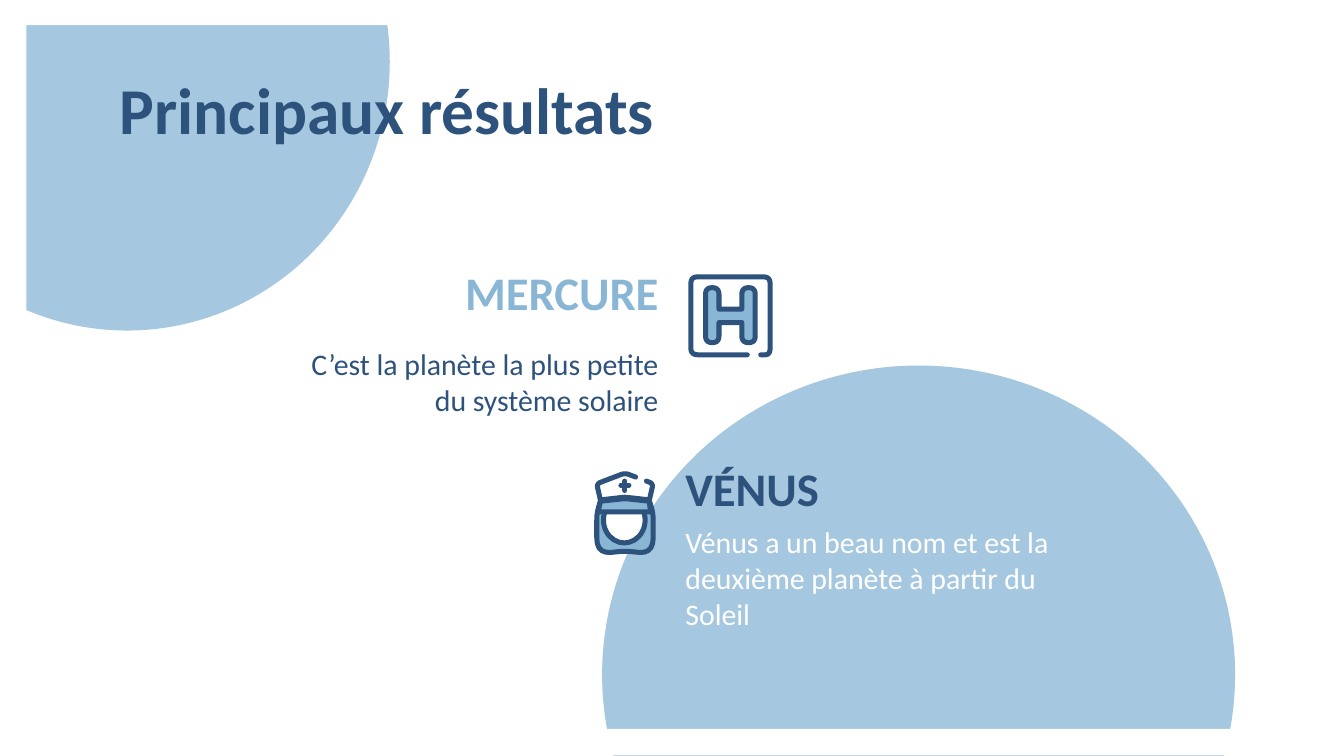
from lxml import etree
from pptx import Presentation
from pptx.dml.color import RGBColor
from pptx.enum import shapes, text
from pptx.oxml.ns import qn
from pptx.util import Inches, Pt

COLORS = {"navy": "2D527C", "sky": "8AB6D6", "white": "FFFFFF"}

prs = Presentation()
prs.slide_width = Inches(10)
prs.slide_height = Inches(10) * 9 // 16
s = prs.slides.add_slide(prs.slide_layouts.get_by_name("Comparison"))


def paint(sp, fill=None, line=None):
    """Set fill and outline; outlines get round caps and joins."""
    sp.shadow.inherit = False
    if fill:
        sp.fill.solid()
        sp.fill.fore_color.rgb = RGBColor.from_string(COLORS[fill])
    else:
        sp.fill.background()
    if line:
        sp.line.color.rgb = RGBColor.from_string(COLORS[line])
        sp.line.width = Pt(2.7)
        ln = sp.line._get_or_add_ln()
        ln.set("cap", "rnd")
        etree.SubElement(ln, qn("a:round"))
    else:
        sp.line.fill.background()


def draw(corners, fill=None, close=True):
    """Draw a navy outline through (x, y, corner radius) points."""
    pts = []
    for i, (x, y, radius) in enumerate(corners):
        if not radius:
            pts.append((x, y))
            continue
        ends = []
        for nx, ny, _ in (corners[i - 1], corners[(i + 1) % len(corners)]):
            dist = ((nx - x) ** 2 + (ny - y) ** 2) ** 0.5
            k = min(radius / dist, 0.5)
            ends.append((x + (nx - x) * k, y + (ny - y) * k))
        (ax, ay), (bx, by) = ends
        for t in (0, 0.2, 0.4, 0.6, 0.8, 1):
            u = 1 - t
            pts.append((u * u * ax + 2 * u * t * x + t * t * bx,
                        u * u * ay + 2 * u * t * y + t * t * by))
    pts = [(Inches(x), Inches(y)) for x, y in pts]
    builder = s.shapes.build_freeform(*pts[0])
    builder.add_line_segments(pts[1:], close=close)
    paint(builder.convert_to_shape(), fill, "navy")


# Background circles and white frame, behind the text
OVAL, FRAME = shapes.MSO_SHAPE.OVAL, shapes.MSO_SHAPE.FRAME
backdrop = [
    (OVAL, "sky", (-1.01, -1.54, 3.91, 4)),
    (OVAL, "sky", (4.48, 2.72, 4.71, 4.6)),
    (FRAME, "white", (0, -0.01, 10, 5.63)),
]
for i, (kind, color, box) in enumerate(backdrop):
    sp = s.shapes.add_shape(kind, *[Inches(v) for v in box])
    paint(sp, color)
    if kind == FRAME:
        sp.adjustments[0] = 0.035
    else:
        clr = sp._element.spPr.find(qn("a:solidFill"))[0]
        etree.SubElement(clr, qn("a:alpha"), val="76000")
    s.shapes._spTree.insert(2 + i, sp._element)

# Title, headings and descriptions
LEFT, RIGHT = text.PP_ALIGN.LEFT, text.PP_ALIGN.RIGHT
texts = [
    (0, "Principaux résultats", (0.79, 0.49, 8.43, 0.63), 35, True, "navy", LEFT),
    (1, "MERCURE", (2.44, 1.88, 2.56, 0.58), 25, True, "sky", RIGHT),
    (2, "C’est la planète la plus petite du système solaire",
     (2.05, 2.34, 2.95, 1), 16, False, "navy", RIGHT),
    (3, "VÉNUS", (5, 3.34, 2.56, 0.58), 25, True, "navy", LEFT),
    (4, "Vénus a un beau nom et est la deuxième planète à partir du Soleil",
     (5, 3.8, 2.95, 1), 16, False, "white", LEFT),
]
holders = {ph.placeholder_format.idx: ph for ph in s.placeholders}
for idx, words, box, size, bold, color, align in texts:
    sp = holders[idx]
    sp.left, sp.top, sp.width, sp.height = [Inches(v) for v in box]
    tf = sp.text_frame
    tf.word_wrap = True
    tf.auto_size = text.MSO_AUTO_SIZE.NONE
    tf.vertical_anchor = text.MSO_ANCHOR.MIDDLE
    tf.margin_left = tf.margin_right = tf.margin_top = tf.margin_bottom = Inches(0.1)
    p = tf.paragraphs[0]
    p.alignment = align
    p.space_before = Pt(0)
    p.line_spacing = 1.0
    pPr = p._p.get_or_add_pPr()
    pPr.set("marL", "0")
    pPr.set("indent", "0")
    etree.SubElement(pPr, qn("a:buNone"))
    r = p.add_run()
    r.text = words
    r.font.name = "Calibri"
    r.font.size = Pt(size)
    r.font.bold = bold
    r.font.color.rgb = RGBColor.from_string(COLORS[color])

# Hospital sign: letter H in an open frame
draw([(5.25, 2.14, 0.05), (5.35, 2.14, 0.05), (5.35, 2.3, 0), (5.52, 2.3, 0),
      (5.52, 2.14, 0.05), (5.62, 2.14, 0.05), (5.62, 2.55, 0.05),
      (5.52, 2.55, 0.05), (5.52, 2.4, 0), (5.35, 2.4, 0),
      (5.35, 2.55, 0.05), (5.25, 2.55, 0.05)], "sky")
draw([(5.56, 2.64, 0), (5.14, 2.64, 0.05), (5.14, 2.06, 0.05),
      (5.73, 2.06, 0.05), (5.73, 2.64, 0.05), (5.66, 2.64, 0)], close=False)

# Nurse: hair, face, hair band, cap and cross
draw([(4.47, 3.72, 0), (4.44, 3.82, 0.05), (4.44, 4.12, 0.12),
      (4.65, 4.1, 0.05), (4.86, 4.12, 0.12), (4.86, 3.82, 0.05),
      (4.83, 3.72, 0)], "sky")
face = s.shapes.add_shape(OVAL, Inches(4.49), Inches(3.7), Inches(0.31), Inches(0.34))
paint(face, "white", "navy")
draw([(4.47, 3.72, 0), (4.65, 3.7, 0.05), (4.83, 3.72, 0),
      (4.84, 3.81, 0), (4.45, 3.81, 0)], "sky")
draw([(4.73, 3.55, 0), (4.65, 3.52, 0.03), (4.44, 3.6, 0.03), (4.47, 3.73, 0.02),
      (4.65, 3.71, 0.03), (4.83, 3.73, 0.02), (4.86, 3.6, 0.03),
      (4.81, 3.58, 0)], close=False)
draw([(4.65, 3.58, 0), (4.65, 3.65, 0)], close=False)
draw([(4.62, 3.61, 0), (4.68, 3.61, 0)], close=False)

prs.save("out.pptx")
